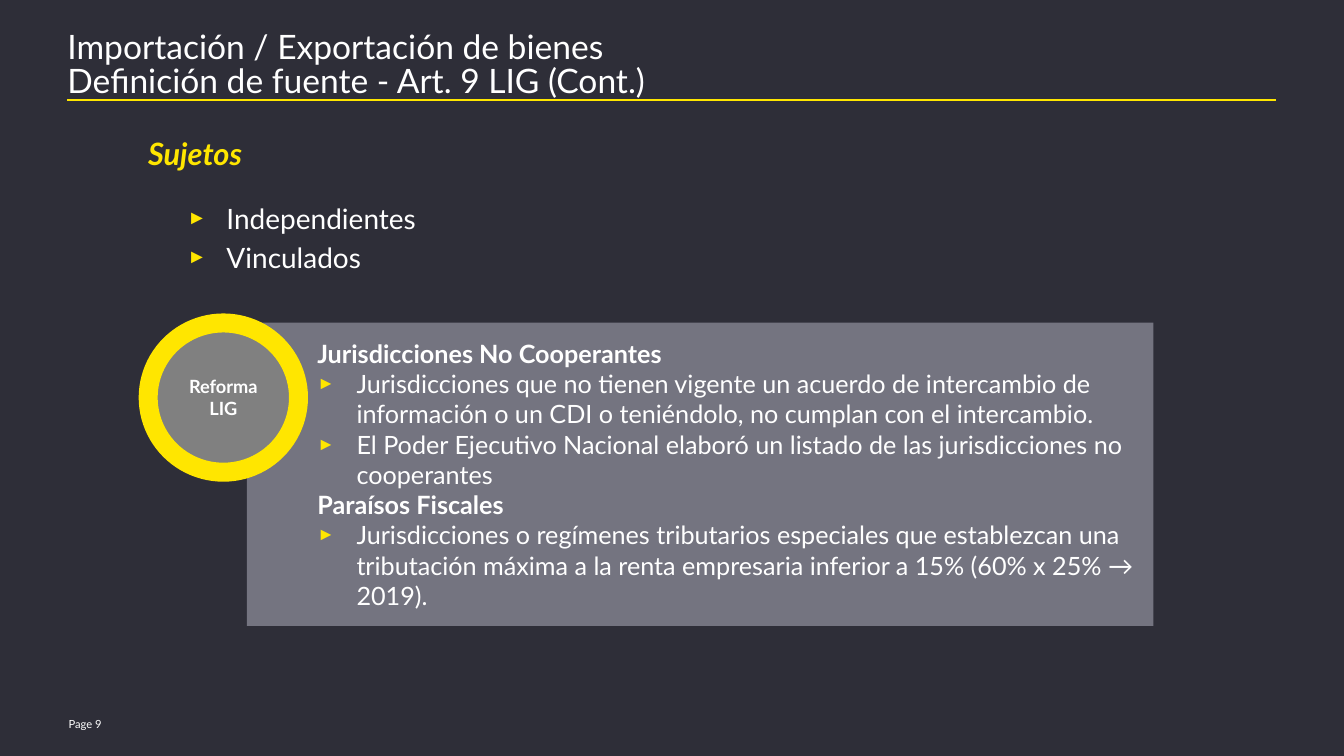
import pptx
import pptx.util
import pptx.dml.color
import pptx.enum.shapes
import pptx.enum.text
import pptx.oxml
import pptx.oxml.ns
from lxml import etree

Pt = pptx.util.Pt
SHAPE = pptx.enum.shapes.MSO_SHAPE
ALIGN = pptx.enum.text.PP_ALIGN
ANCHOR = pptx.enum.text.MSO_ANCHOR

# Content
TITLE = "Importación / Exportación de bienes\vDefinición de fuente - Art. 9 LIG (Cont.)"
PAGE = "Page 9"
SUBJECTS_HEADING = "Sujetos"
SUBJECTS = ["Independientes", "Vinculados"]
BADGE = ["Reforma", "LIG"]
REFORM = [
    ("Jurisdicciones No Cooperantes", [
        "Jurisdicciones que no tienen vigente un acuerdo de intercambio de "
        "información o un CDI o teniéndolo, no cumplan con el intercambio.",
        "El Poder Ejecutivo Nacional elaboró un listado de las jurisdicciones "
        "no cooperantes",
    ]),
    ("Paraísos Fiscales", [
        "Jurisdicciones o regímenes tributarios especiales que establezcan una "
        "tributación máxima a la renta empresaria inferior a 15% (60% x 25% → 2019).",
    ]),
]

# Style
FONT = "Lato"
COLORS = {"background": "2E2E38", "accent": "FFE600", "text": "FFFFFF",
          "panel": "747480", "badge": "808080"}
INDENT = 28
SLIDE_W, SLIDE_H = 960.48, 540
MARGIN = 48.24
RULE_Y = 71.28
BADGE_CENTER = (159.6, 284)
RING_SIZE = (121, 120.2)
BADGE_SIZE = (97.2, 96.5)


def color(name):
    return pptx.dml.color.RGBColor.from_string(COLORS[name])


def prepare(shape, insets=(0, 0, 0, 0), anchor=ANCHOR.TOP):
    frame = shape.text_frame
    frame.word_wrap = True
    frame.vertical_anchor = anchor
    (frame.margin_left, frame.margin_top,
     frame.margin_right, frame.margin_bottom) = map(Pt, insets)
    return frame


def add_text_box(slide, box, **layout):
    return prepare(slide.shapes.add_textbox(*map(Pt, box)), **layout)


def add_filled(slide, preset, box, fill):
    shape = slide.shapes.add_shape(preset, *map(Pt, box))
    shape.shadow.inherit = False
    shape.fill.solid()
    shape.fill.fore_color.rgb = color(fill)
    shape.line.fill.background()
    return shape


def write(frame, text, size, align=ALIGN.LEFT, bold=False, italic=False,
          fill="text", before=0):
    first = frame.paragraphs[0]
    paragraph = frame.add_paragraph() if first.text else first
    paragraph.text = text
    paragraph.alignment = align
    paragraph.space_before = Pt(before)
    font = paragraph.font
    font.name, font.size, font.bold, font.italic = FONT, Pt(size), bold, italic
    font.color.rgb = color(fill)
    return paragraph


def add_bullet(paragraph, left):
    properties = paragraph._p.get_or_add_pPr()
    properties.set("marL", str(int(Pt(left))))
    properties.set("indent", str(-int(Pt(INDENT))))
    namespace = pptx.oxml.ns.nsdecls("a")
    bullet = [
        f'<a:buClr {namespace}><a:srgbClr val="{COLORS["accent"]}"/></a:buClr>',
        f'<a:buSzPct {namespace} val="70000"/>',
        f'<a:buFont {namespace} typeface="Arial"/>',
        f'<a:buChar {namespace} char="►"/>',
    ]
    defaults = properties.find(pptx.oxml.ns.qn("a:defRPr"))
    for xml in bullet:
        defaults.addprevious(pptx.oxml.parse_xml(xml))


def centered(size):
    return [c - s / 2 for c, s in zip(BADGE_CENTER, size)] + list(size)


def main():
    deck = pptx.Presentation()
    deck.slide_width, deck.slide_height = Pt(SLIDE_W), Pt(SLIDE_H)
    slide = deck.slides.add_slide(deck.slide_layouts[6])
    slide.background.fill.solid()
    slide.background.fill.fore_color.rgb = color("background")

    # Title, rule and page number
    rule = slide.shapes.add_connector(
        pptx.enum.shapes.MSO_CONNECTOR.STRAIGHT,
        Pt(MARGIN), Pt(RULE_Y), Pt(SLIDE_W - MARGIN), Pt(RULE_Y))
    rule.line.color.rgb = color("accent")
    rule.line.width = Pt(1.5)
    etree.SubElement(rule._element.spPr, pptx.oxml.ns.qn("a:effectLst"))
    title = add_text_box(slide, (MARGIN, 23, SLIDE_W - 2 * MARGIN, 46.8))
    write(title, TITLE, 24).line_spacing = 0.85
    page = add_text_box(slide, (49, 509.8, 52.6, 14.4), anchor=ANCHOR.MIDDLE)
    write(page, PAGE, 8)

    # Subjects
    subjects = add_text_box(slide, (105.84, 96.5, 671.8, 110))
    write(subjects, SUBJECTS_HEADING, 22, ALIGN.JUSTIFY,
          bold=True, italic=True, fill="accent")
    for index, subject in enumerate(SUBJECTS):
        add_bullet(write(subjects, subject, 20, ALIGN.JUSTIFY,
                         before=4 if index else 20.8), 2 * INDENT)

    # Reform panel
    panel = add_filled(slide, SHAPE.RECTANGLE, (176.4, 230.4, 648, 216.7), "panel")
    reform = prepare(panel, (50.4, 5.76, 8.64, 5.76), ANCHOR.MIDDLE)
    for heading, points in REFORM:
        write(reform, heading, 18, bold=True)
        for point in points:
            add_bullet(write(reform, point, 18), INDENT)

    # Badge with its ring
    badge = add_filled(slide, SHAPE.OVAL, centered(BADGE_SIZE), "badge")
    label = prepare(badge, anchor=ANCHOR.MIDDLE)
    for line in BADGE:
        write(label, line, 13, ALIGN.CENTER, bold=True)
    ring = add_filled(slide, SHAPE.DONUT, centered(RING_SIZE), "accent")
    ring.adjustments[0] = 0.113

    deck.save("out.pptx")


if __name__ == "__main__":
    main()
